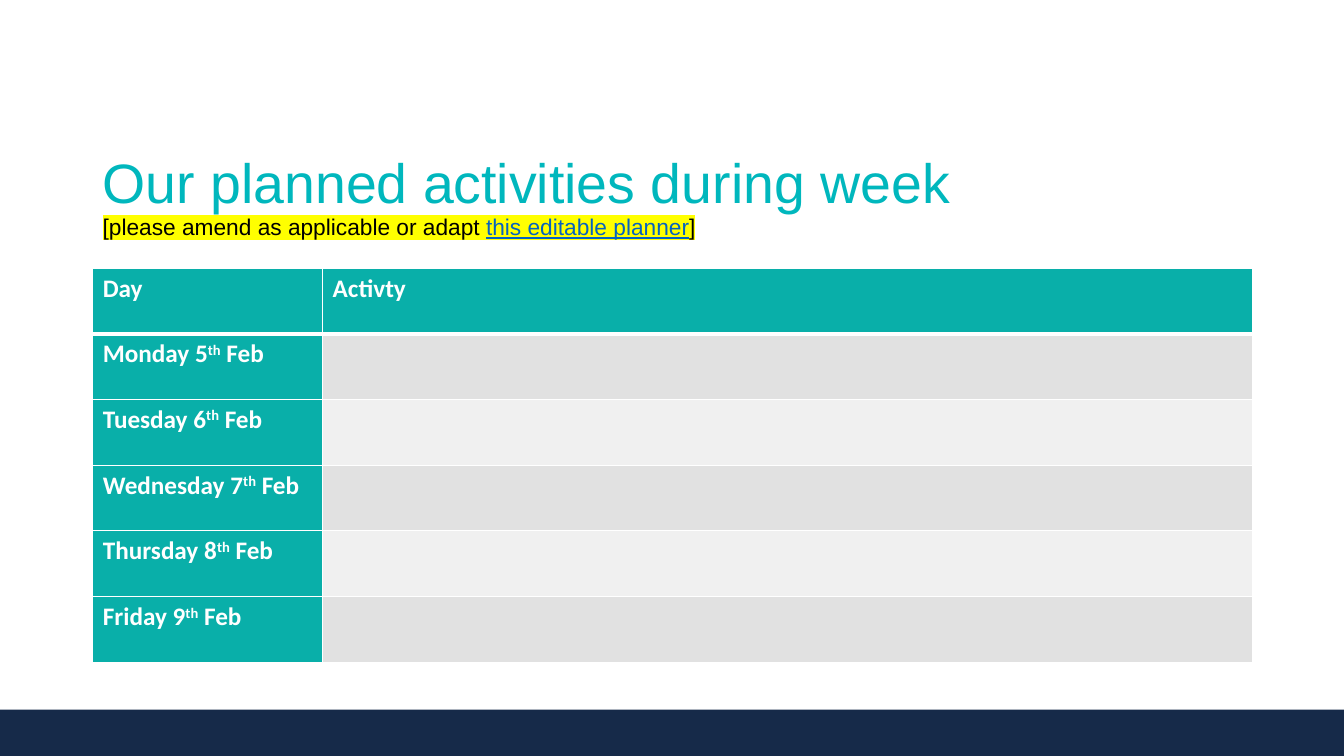
from lxml import etree
from pptx import Presentation
from pptx import util as u
from pptx.dml.color import RGBColor
from pptx.enum import shapes, text
from pptx.oxml.ns import qn

WHITE = RGBColor(0xFF, 0xFF, 0xFF)
BLACK = RGBColor(0x00, 0x00, 0x00)
NAVY = RGBColor(0x16, 0x2A, 0x49)
TURQUOISE = RGBColor(0x00, 0xB7, 0xBD)
TEAL = RGBColor(0x09, 0xAF, 0xA9)
LINK_BLUE = RGBColor(0x05, 0x63, 0xC1)
YELLOW = RGBColor(0xFF, 0xFF, 0x00)
BANDS = [RGBColor(0xE1, 0xE1, 0xE1), RGBColor(0xF0, 0xF0, 0xF0)]

WIDTH, HEIGHT = u.Inches(13.33), u.Inches(7.5)
LEFT, CONTENT_WIDTH = u.Inches(0.92), u.Inches(11.5)
DAYS = ["Monday", "Tuesday", "Wednesday", "Thursday", "Friday"]
FIRST_DATE = 5


def add_color(parent, color):
    fill = etree.SubElement(parent, qn("a:solidFill"))
    etree.SubElement(fill, qn("a:srgbClr"), val=str(color))


def add_run(paragraph, words, size, color, highlight=None):
    run = paragraph.add_run()
    run.text = words
    run.font.size = u.Pt(size)
    run.font.color.rgb = color
    if highlight is not None:
        mark = etree.Element(qn("a:highlight"))
        etree.SubElement(mark, qn("a:srgbClr"), val=str(highlight))
        run.font._element.find(qn("a:solidFill")).addnext(mark)
    return run


def draw_footer(slide, left, top, width, height):
    footer = slide.shapes.add_shape(
        shapes.MSO_SHAPE.RECTANGLE, left, top, width, height)
    footer.shadow.inherit = False
    footer.fill.solid()
    footer.fill.fore_color.rgb = NAVY
    footer.line.fill.background()


def draw_heading(slide, left, top, width, height):
    frame = slide.shapes.add_textbox(left, top, width, height).text_frame
    frame.word_wrap = True
    frame.vertical_anchor = text.MSO_ANCHOR.MIDDLE
    heading = frame.paragraphs[0]
    heading.line_spacing = 0.9
    heading.font.name = "Arial"
    add_run(heading, "Our planned activities during week", 39.6, TURQUOISE)
    heading.add_line_break()
    add_run(heading, "[please amend as applicable or adapt ", 16.2, BLACK, YELLOW)
    planner = add_run(heading, "this editable planner", 16.2, LINK_BLUE, YELLOW)
    planner.font.underline = True
    add_run(heading, "]", 16.2, BLACK, YELLOW)


def style_cell(cell, fill, bottom=1, top=1):
    properties = cell._tc.get_or_add_tcPr()
    for side, points in (("L", 1), ("R", 1), ("T", top), ("B", bottom)):
        border = etree.SubElement(
            properties, qn(f"a:ln{side}"), w=str(u.Pt(points)))
        add_color(border, WHITE)
    cell.fill.solid()
    cell.fill.fore_color.rgb = fill
    label = cell.text_frame.paragraphs[0]
    label.font.name = "Calibri"
    label.font.size = u.Pt(18)
    label.font.bold = True
    label.font.color.rgb = WHITE
    return label


def draw_planner(slide, left, top, width, height):
    planner = slide.shapes.add_table(
        len(DAYS) + 1, 2, left, top, width, height).table
    planner.columns[0].width = u.Inches(2.28)
    planner.columns[1].width = width - planner.columns[0].width
    for column, title in enumerate(["Day", "Activty"]):
        style_cell(planner.cell(0, column), TEAL, bottom=3).add_run().text = title
    for row, day in enumerate(DAYS, 1):
        rule = 3 if row == 1 else 1
        label = style_cell(planner.cell(row, 0), TEAL, top=rule)
        label.add_run().text = f"{day} {FIRST_DATE + row - 1}"
        ordinal = label.add_run()
        ordinal.text = "th"
        ordinal.font._element.set("baseline", "30000")
        label.add_run().text = " Feb"
        style_cell(planner.cell(row, 1), BANDS[(row - 1) % 2], top=rule)


def main():
    deck = Presentation()
    deck.slide_width, deck.slide_height = WIDTH, HEIGHT
    slide = deck.slides.add_slide(deck.slide_layouts[6])
    draw_footer(slide, 0, u.Inches(7.04), WIDTH, u.Inches(0.48))
    draw_heading(slide, LEFT, u.Inches(1.52), CONTENT_WIDTH, u.Inches(0.89))
    draw_planner(slide, LEFT, u.Inches(2.66), CONTENT_WIDTH, u.Inches(3.91))
    deck.save("out.pptx")


if __name__ == "__main__":
    main()
